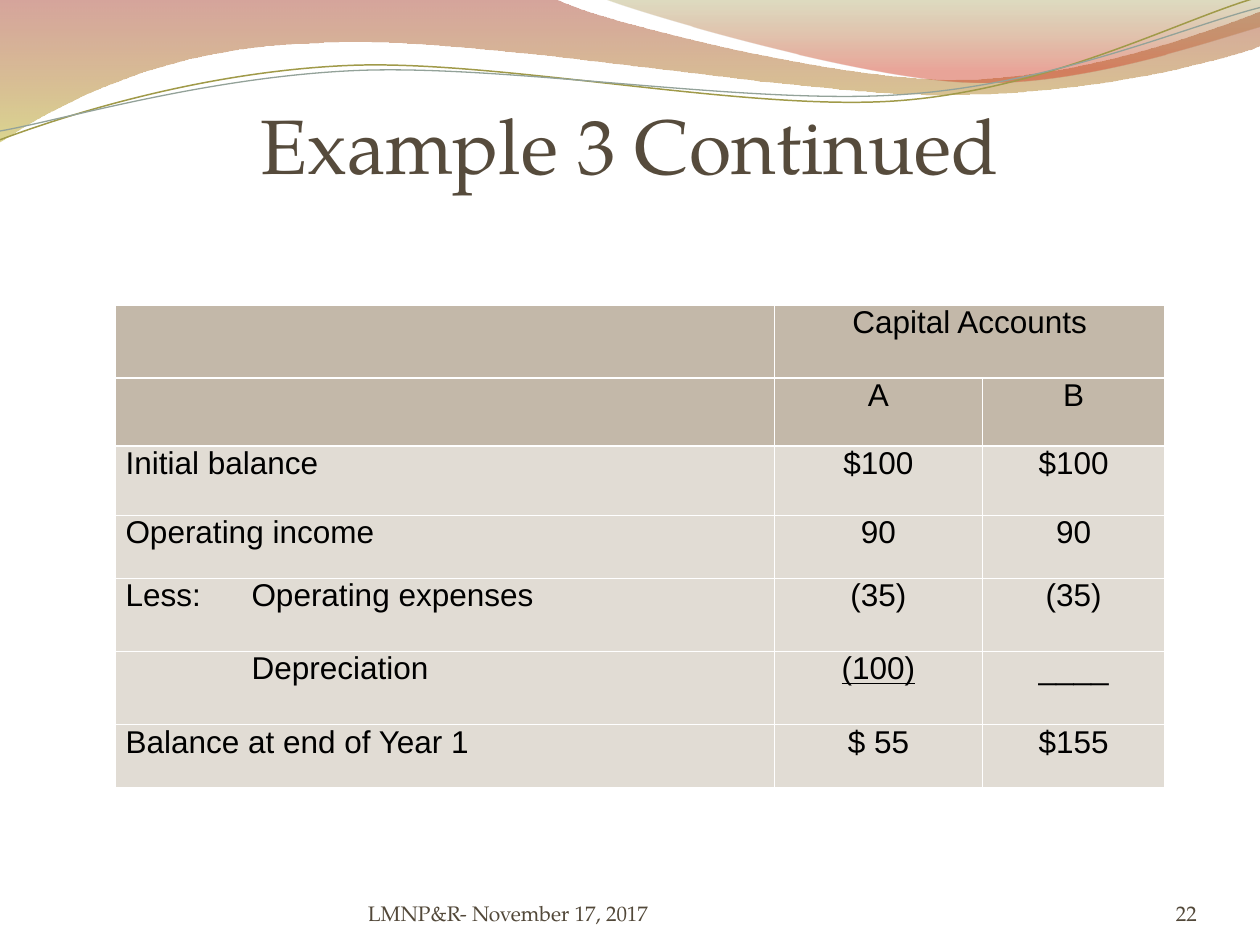
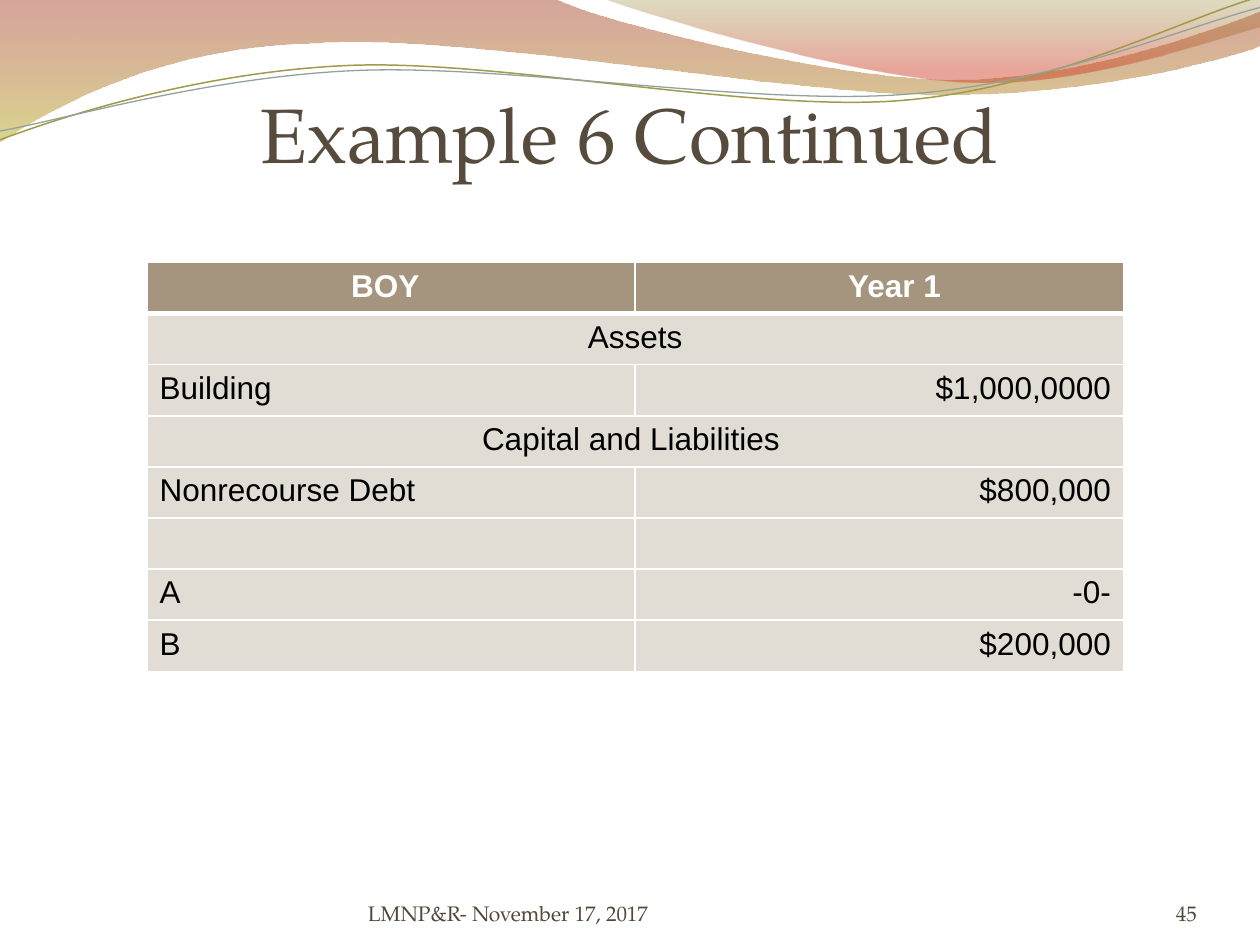
from lxml import etree
from pptx import Presentation
from pptx.dml.color import RGBColor
from pptx.enum.text import MSO_ANCHOR, MSO_AUTO_SIZE, PP_ALIGN
from pptx.oxml import parse_xml
from pptx.oxml.ns import nsdecls, qn
from pptx.util import Inches, Pt

LEFT, CENTER, RIGHT, JUSTIFY = PP_ALIGN.LEFT, PP_ALIGN.CENTER, PP_ALIGN.RIGHT, PP_ALIGN.JUSTIFY
BOTTOM = MSO_ANCHOR.BOTTOM
NO_AUTOFIT = MSO_AUTO_SIZE.NONE

WHITE = RGBColor(0xFF, 0xFF, 0xFF)
BLACK = RGBColor(0x00, 0x00, 0x00)
TITLE_BROWN = RGBColor(0x56, 0x4B, 0x3C)
FOOTER_BROWN = RGBColor(0x52, 0x48, 0x39)
HEAD_TAN = RGBColor(0xC3, 0xB8, 0xA9)
HEAD_DARK = RGBColor(0xA5, 0x95, 0x7E)
BODY_TAN = RGBColor(0xE1, 0xDC, 0xD4)
RUST = RGBColor(0xA4, 0x37, 0x24)
GOLD = RGBColor(0xBD, 0xB3, 0x33)
OLIVE = RGBColor(0x91, 0x8A, 0x33)
RED = RGBColor(0xD0, 0x38, 0x1E)
OLIVE_LINE = RGBColor(0xA0, 0x9A, 0x49)
GREY_LINE = RGBColor(0x93, 0xA2, 0x99)

SERIF, SANS = "TeX Gyre Pagella", "Arial"
FOOTER = "LMNP&R- November 17, 2017"

# Each outline is a start point, then lines (one point) and Bézier curves (three points).
WIDE_WAVE = [
    (0, 0), [(4.4, -0.01)],
    [(4.76, 0.17), (6.64, 0.63), (7.58, 0.63)], [(8.53, 0.63), (9.58, 0.26), (10, 0.09)],
    [(10.01, 0.36)],
    [(9.83, 0.44), (8.7, 0.76), (7.46, 0.75)], [(6.22, 0.75), (3.82, 0.28), (2.57, 0.34)],
    [(1.29, 0.36), (0.46, 0.83), (-0.01, 1.13)], [(0, 0)],
]
RIGHT_WAVE = [
    (4.79, -0.01),
    [(5.09, 0.11), (6.82, 0.62), (7.69, 0.65)], [(8.56, 0.69), (9.61, 0.32), (10, 0.21)],
    [(10, 0)], [(4.79, -0.01)],
]
OLIVE_CURVE = [
    (0, 1.11),
    [(0.48, 0.93), (1.58, 0.57), (2.77, 0.52)], [(3.95, 0.47), (5.93, 0.89), (7.13, 0.8)],
    [(8.33, 0.71), (9.38, 0.15), (9.98, -0.02)],
]
GREY_CURVE = [
    (0, 1.04),
    [(0.47, 0.96), (1.64, 0.61), (2.83, 0.56)], [(4.03, 0.51), (5.97, 0.84), (7.17, 0.75)],
    [(8.36, 0.67), (9.41, 0.21), (10, 0.06)],
]

CAPITAL_ROWS = [
    ("", "Capital Accounts", ""),
    ("", "A", "B"),
    ("Initial balance", "$100", "$100"),
    ("Operating income", "90", "90"),
    ("Less:\tOperating expenses", "(35)", "(35)"),
    ("\tDepreciation", "(100)", "____"),
    ("Balance at end of Year 1", "$ 55", "$155"),
]
BALANCE_ROWS = [
    ("BOY", "Year 1"),
    ("Assets", ""),
    ("Building", "$1,000,0000"),
    ("Capital and Liabilities ", ""),
    ("Nonrecourse Debt", "$800,000"),
    ("", ""),
    ("A", "-0-"),
    ("B", "$200,000"),
]


def add_outline(page, outline, close):
    """Add a freeform whose three-point segments become true Bézier curves."""
    (x, y), *segments = outline
    builder = page.shapes.build_freeform(Inches(x), Inches(y))
    builder.add_line_segments([(Inches(x), Inches(y)) for segment in segments
                               for x, y in segment], close=close)
    shape = builder.convert_to_shape()
    lines = iter(list(shape.element.iter(qn("a:lnTo"))))
    for segment in segments:
        parts = [next(lines) for _ in segment]
        if len(parts) == 3:
            curve = etree.Element(qn("a:cubicBezTo"))
            parts[0].addprevious(curve)
            for part in parts:
                curve.append(part[0])
                part.getparent().remove(part)
    shape.shadow.inherit = False
    shape.fill.background()
    return shape


def add_wave(page, outline, stops):
    """Add a band with a see-through vertical gradient of (percent, colour, opacity)."""
    wave = add_outline(page, outline, close=True)
    wave.line.fill.background()
    stop_xml = "".join(
        f'<a:gs pos="{at * 1000}"><a:srgbClr val="{colour}">'
        f'<a:alpha val="{opacity * 1000}"/></a:srgbClr></a:gs>'
        for at, colour, opacity in stops)
    gradient = parse_xml(f'<a:gradFill {nsdecls("a")} rotWithShape="1"><a:gsLst>{stop_xml}'
                         '</a:gsLst><a:lin ang="5400000" scaled="0"/></a:gradFill>')
    properties = wave.element.spPr
    properties.replace(properties.find(qn("a:noFill")), gradient)
    return wave


def add_curve(page, outline, colour, width):
    curve = add_outline(page, outline, close=False)
    curve.line.color.rgb = colour
    curve.line.width = Pt(width)
    return curve


def add_waves_to_layout(page):
    """Draw the waves on a page, then move them to its layout so all pages share them."""
    waves = [
        add_wave(page, WIDE_WAVE, [(0, RUST, 45), (100, GOLD, 55)]),
        add_wave(page, RIGHT_WAVE, [(0, OLIVE, 30), (80, RED, 45)]),
        add_curve(page, OLIVE_CURVE, OLIVE_LINE, 0.85),
        add_curve(page, GREY_CURVE, GREY_LINE, 0.75),
    ]
    for wave in waves:
        page.slide_layout.shapes.element.append(wave.element)


def write(frame, text, size, font, colour, align, bold=False):
    para = frame.paragraphs[0]
    para.alignment = align
    span = para.add_run()
    span.text = text
    span.font.size = Pt(size)
    span.font.name = font
    span.font.color.rgb = colour
    span.font.bold = bold
    return span


def set_frame(frame, margin_top=0):
    frame.word_wrap = True
    frame.auto_size = NO_AUTOFIT
    frame.vertical_anchor = BOTTOM
    frame.margin_left = frame.margin_right = frame.margin_bottom = 0
    frame.margin_top = Inches(margin_top)


def add_title(page, text, height):
    title = page.shapes.title
    title.left, title.top = Inches(0.5), Inches(5 / 6)
    title.width, title.height = Inches(9), Inches(height)
    set_frame(title.text_frame, 0.05)
    write(title.text_frame, text, 44, SERIF, TITLE_BROWN, CENTER)


def add_footer(page, number):
    for left, width, text, align in [(8.67, 0.83, number, RIGHT), (2.92, 3.67, FOOTER, LEFT)]:
        box = page.shapes.add_textbox(Inches(left), Inches(6.95), Inches(width), Inches(0.4))
        set_frame(box.text_frame)
        write(box.text_frame, text, 12, SERIF, FOOTER_BROWN, align)


def format_cell(cell, fill, top=1, bottom=1):
    """Give a cell white borders (in points) and a solid fill."""
    properties = cell._tc.get_or_add_tcPr()
    for side, width in (("L", 1), ("R", 1), ("T", top), ("B", bottom)):
        border = etree.SubElement(properties, qn(f"a:ln{side}"), w=str(Pt(width)))
        paint = etree.SubElement(border, qn("a:solidFill"))
        etree.SubElement(paint, qn("a:srgbClr"), val=str(WHITE))
    cell.fill.solid()
    cell.fill.fore_color.rgb = fill


def add_tab_stop(para, position):
    stops = etree.SubElement(para._p.get_or_add_pPr(), qn("a:tabLst"))
    etree.SubElement(stops, qn("a:tab"), pos=str(Inches(position)), algn="l")


def add_grid(page, left, top, widths, heights):
    frame = page.shapes.add_table(len(heights), len(widths), Inches(left), Inches(top),
                                  Inches(sum(widths)), Inches(sum(heights)))
    grid = frame.table
    grid.first_row = grid.horz_banding = False
    for column, width in zip(grid.columns, widths):
        column.width = Inches(width)
    for row, height in zip(grid.rows, heights):
        row.height = Inches(height)
    return grid


def add_capital_table(page, left, top):
    grid = add_grid(page, left, top, [5.23, 1.65, 1.45],
                    [0.58, 0.54, 0.55, 0.5, 0.58, 0.58, 0.5])
    for r, texts in enumerate(CAPITAL_ROWS):
        for c, text in enumerate(texts):
            cell = grid.cell(r, c)
            format_cell(cell, HEAD_TAN if r < 2 else BODY_TAN)
            cell.margin_left = cell.margin_right = Inches(0.08)
            cell.margin_top = cell.margin_bottom = 0
            if text:
                span = write(cell.text_frame, text, 18, SANS, BLACK, CENTER if c else JUSTIFY)
                span.font.underline = text == "(100)"
                para = cell.text_frame.paragraphs[0]
                para.space_after = Pt(6)
                if "\t" in text:
                    add_tab_stop(para, 1)
    grid.cell(0, 1).merge(grid.cell(0, 2))


def add_balance_table(page, left, top):
    rows = len(BALANCE_ROWS)
    grid = add_grid(page, left, top, [7.75 / 2] * 2, [3.245 / rows] * rows)
    for r, texts in enumerate(BALANCE_ROWS):
        header = r == 0
        heading = bool(texts[0]) and not texts[1]
        for c, text in enumerate(texts):
            cell = grid.cell(r, c)
            format_cell(cell, HEAD_DARK if header else BODY_TAN,
                        top=3 if r == 1 else 1, bottom=3 if header else 1)
            if header:
                cell.margin_left = Inches((1.62, 1.69)[c])
            if text:
                align = LEFT if header else CENTER if heading else (LEFT, RIGHT)[c]
                write(cell.text_frame, text, 18, SANS, WHITE if header else BLACK, align, header)
        if heading:
            grid.cell(r, 0).merge(grid.cell(r, 1))


def add_page(deck, title, title_height, number):
    page = deck.slides.add_slide(deck.slide_layouts.get_by_name("Title Only"))
    add_title(page, title, title_height)
    add_footer(page, number)
    return page


def main():
    deck = Presentation()
    deck.slide_width, deck.slide_height = Inches(10), Inches(7.5)
    capital_page = add_page(deck, "Example 3 Continued", 0.67, "22")
    add_waves_to_layout(capital_page)
    add_capital_table(capital_page, 11 / 12, 2.42)
    balance_page = add_page(deck, "Example 6 Continued", 7 / 12, "45")
    add_balance_table(balance_page, 7 / 6, 25 / 12)
    deck.save("out.pptx")


if __name__ == "__main__":
    main()
